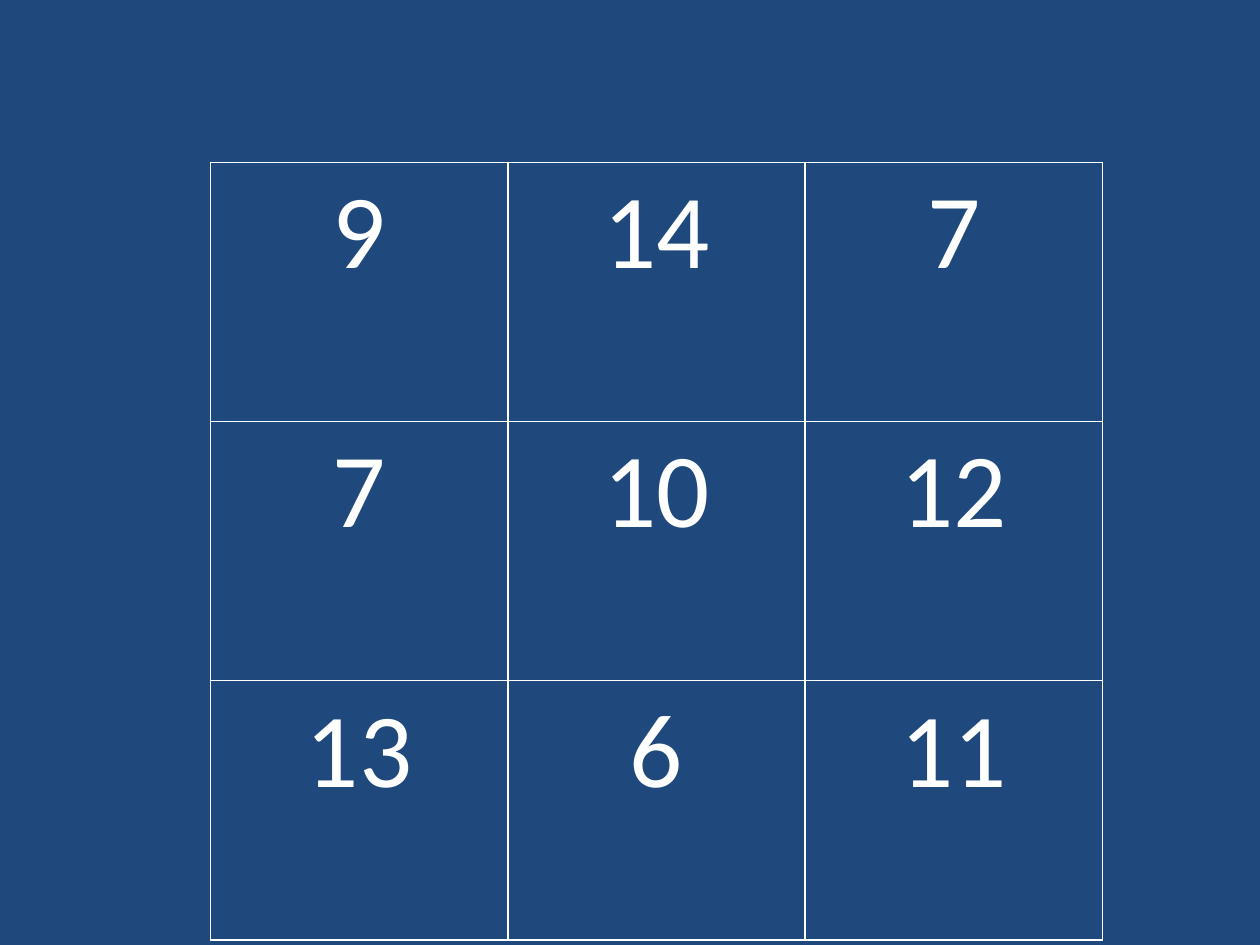
from dataclasses import dataclass

from lxml.etree import SubElement
from pptx import Presentation
from pptx.dml.color import RGBColor
from pptx.enum.text import PP_ALIGN as Align
from pptx.oxml.ns import qn
from pptx.util import Inches, Pt

COLORS = {"background": "1F497D", "foreground": "FFFFFF"}
FONT = "Calibri"
BORDER_SIDES = ("a:lnL", "a:lnR", "a:lnT", "a:lnB")


@dataclass(frozen=True)
class NumberGrid:
    left: float
    top: float
    width: float
    height: float
    rows: tuple[tuple[int, ...], ...]


GRID = NumberGrid(1.67, 1.29, 7.08, 6.17, ((9, 14, 7), (7, 10, 12), (13, 6, 11)))


def add_borders(cell, color: str, width: float) -> None:
    properties = cell._tc.get_or_add_tcPr()
    for position, side in enumerate(BORDER_SIDES):
        line = SubElement(properties, qn(side), w=str(Pt(width)))
        fill = SubElement(line, qn("a:solidFill"))
        SubElement(fill, qn("a:srgbClr"), val=color)
        properties.insert(position, line)  # borders precede the cell fill


def write_number(cell, number: int) -> None:
    paragraph = cell.text_frame.paragraphs[0]
    paragraph.alignment = Align.CENTER
    run = paragraph.add_run()
    run.text = str(number)
    run.font.name = FONT
    run.font.size = Pt(60)
    run.font.color.rgb = RGBColor.from_string(COLORS["foreground"])


def add_number_grid(slide, grid: NumberGrid) -> None:
    table = slide.shapes.add_table(
        len(grid.rows), len(grid.rows[0]),
        Inches(grid.left), Inches(grid.top),
        Inches(grid.width), Inches(grid.height),
    ).table
    table.first_row = False
    table.horz_banding = False
    for row, numbers in zip(table.rows, grid.rows):
        for cell, number in zip(row.cells, numbers):
            cell.fill.background()
            add_borders(cell, COLORS["foreground"], 1)
            write_number(cell, number)


def main() -> None:
    presentation = Presentation()
    presentation.slide_width = Inches(10)
    presentation.slide_height = Inches(7.5)
    blank_layout = presentation.slide_layouts[6]
    slide = presentation.slides.add_slide(blank_layout)
    background = slide.background.fill
    background.solid()
    background.fore_color.rgb = RGBColor.from_string(COLORS["background"])
    add_number_grid(slide, GRID)
    presentation.save("out.pptx")


if __name__ == "__main__":
    main()
